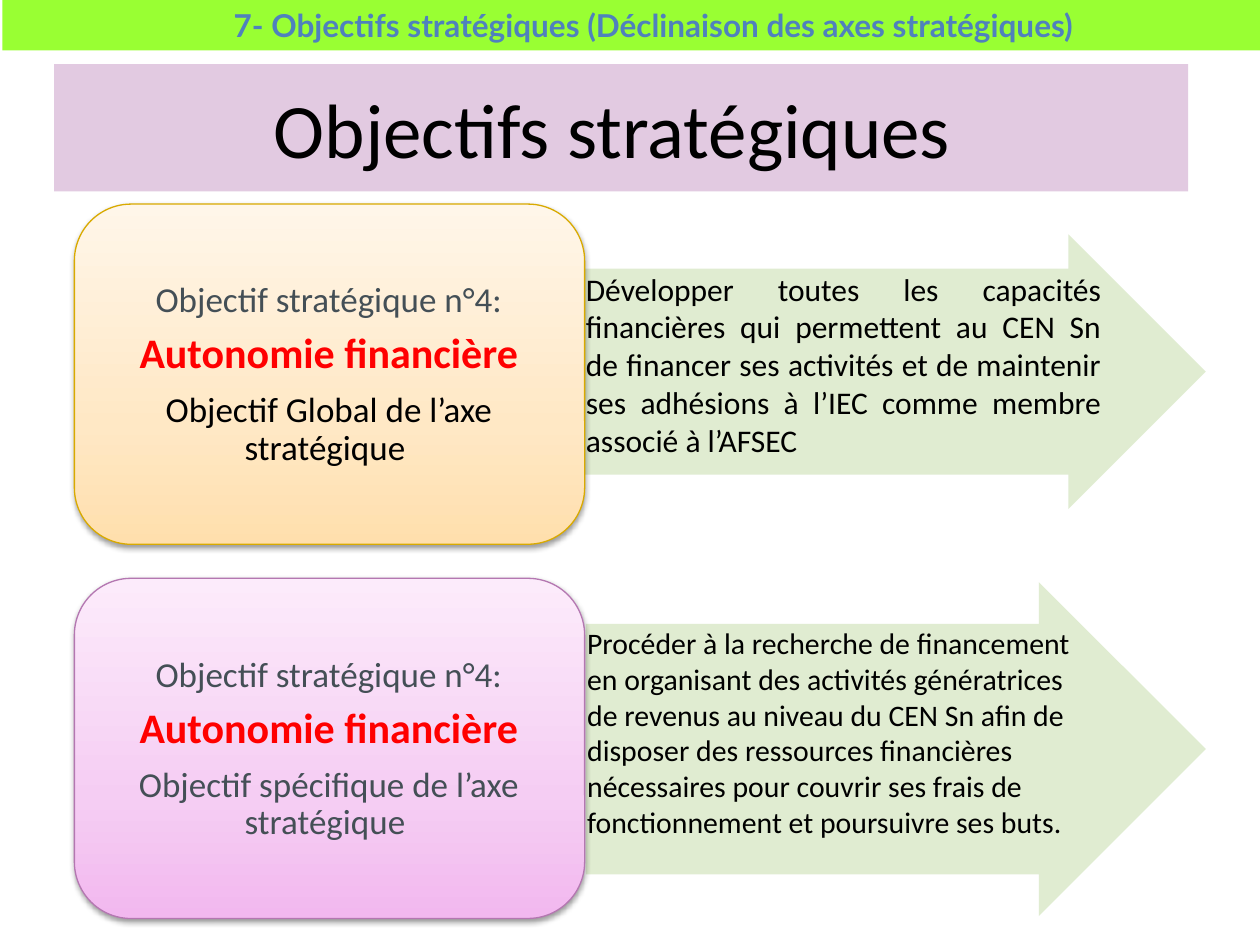
from dataclasses import dataclass

from lxml import etree
from pptx import Presentation
from pptx.dml.color import RGBColor
from pptx.enum.shapes import MSO_SHAPE as Shape
from pptx.enum.text import MSO_ANCHOR as Anchor, PP_ALIGN as Align
from pptx.oxml import parse_xml
from pptx.oxml.ns import nsdecls, qn
from pptx.util import Inches, Pt


@dataclass(frozen=True)
class Theme:
    font: str = "Calibri"
    banner_font: str = "Lato"
    black: str = "000000"
    grey: str = "444F56"
    red: str = "FF0000"
    blue: str = "4F81BD"
    green: str = "99FF33"
    mauve: str = "E2CAE1"
    arrow: str = "DDEBCD"
    orange: tuple = ("FFDFAD", "FFE8C5", "FFF6E9")
    orange_line: str = "D9AA00"
    pink: tuple = ("F2B8EF", "F5CDF3", "FCEBFB")
    pink_line: str = "B477B1"
    title_size: int = 44
    axis_size: int = 24
    label_size: int = 20
    banner_size: int = 18


def write(para, text, size, color, font=Theme.font, bold=False, align=Align.LEFT,
          line_spacing=None, space_after=None):
    span = para.add_run()
    span.text = text
    span.font.size = Pt(size)
    span.font.name = font
    span.font.bold = bold
    span.font.color.rgb = RGBColor.from_string(color)
    para.alignment = align
    if line_spacing is not None:
        para.line_spacing = line_spacing
    if space_after is not None:
        para.space_after = Pt(space_after)


class Page:
    def __init__(self, deck, theme):
        self.theme = theme
        self.slide = deck.slides.add_slide(deck.slide_layouts[5])

    def title(self, text, left, top, width, height):
        box = self.slide.shapes.title
        box.left, box.top = Inches(left), Inches(top)
        box.width, box.height = Inches(width), Inches(height)
        box.fill.solid()
        box.fill.fore_color.rgb = RGBColor.from_string(self.theme.mauve)
        box.text_frame.vertical_anchor = Anchor.MIDDLE
        write(box.text_frame.paragraphs[0], text, self.theme.title_size,
              self.theme.black, align=Align.CENTER)

    def shape(self, kind, left, top, width, height, color):
        box = self.slide.shapes.add_shape(
            kind, Inches(left), Inches(top), Inches(width), Inches(height))
        box.shadow.inherit = False
        box.fill.solid()
        box.fill.fore_color.rgb = RGBColor.from_string(color)
        box.line.fill.background()
        return box

    def banner(self, text, left, top, width, height):
        box = self.shape(Shape.RECTANGLE, left, top, width, height, self.theme.green)
        frame = box.text_frame
        frame.word_wrap = True
        frame.margin_left = Inches(0.49)
        frame.vertical_anchor = Anchor.MIDDLE
        write(frame.paragraphs[0], text, self.theme.banner_size, self.theme.blue,
              font=self.theme.banner_font, bold=True, align=Align.CENTER)

    def arrow(self, left, top, width, height):
        box = self.shape(Shape.RIGHT_ARROW, left, top, width, height, self.theme.arrow)
        box.adjustments[0], box.adjustments[1] = 0.75, 0.5
        color = box.fill._xPr.find(qn("a:solidFill"))[0]
        etree.SubElement(color, qn("a:alpha"), val="90000")

    def card(self, left, top, width, height, colors, line):
        box = self.shape(Shape.ROUNDED_RECTANGLE, left, top, width, height, colors[0])
        box.line.color.rgb = RGBColor.from_string(line)
        box.line.width = Pt(0.75)
        stops = "".join(
            f'<a:gs pos="{place}"><a:srgbClr val="{color}"/></a:gs>'
            for place, color in zip((0, 35000, 100000), colors))
        properties = box._element.spPr
        properties.replace(properties.find(qn("a:solidFill")), parse_xml(
            f'<a:gradFill {nsdecls("a")} rotWithShape="1"><a:gsLst>{stops}</a:gsLst>'
            '<a:lin ang="16200000" scaled="0"/></a:gradFill>'))
        properties.find(qn("a:effectLst")).append(parse_xml(
            f'<a:outerShdw {nsdecls("a")} blurRad="{Pt(3.1)}" dist="{Pt(1.6)}" '
            'dir="5400000" rotWithShape="0"><a:srgbClr val="000000">'
            '<a:alpha val="38000"/></a:srgbClr></a:outerShdw>'))

    def text(self, left, top, width, height, margins, anchor=Anchor.TOP):
        box = self.slide.shapes.add_textbox(
            Inches(left), Inches(top), Inches(width), Inches(height))
        frame = box.text_frame
        frame.word_wrap = True
        frame.vertical_anchor = anchor
        frame.margin_left = frame.margin_right = Inches(margins[0])
        frame.margin_top = frame.margin_bottom = Inches(margins[1])
        return frame

    def description(self, text, left, top, width, height, size, align):
        frame = self.text(left, top, width, height, (0.01, 0.01))
        write(frame.paragraphs[0], text, size, self.theme.black, align=align)

    def objective(self, goal, goal_color, left, top, width, height):
        theme = self.theme
        frame = self.text(left, top, width, height, (0.08, 0.04), Anchor.MIDDLE)
        lines = (
            ("Objectif stratégique n°4:", theme.label_size, theme.grey, False),
            ("Autonomie financière", theme.axis_size, theme.red, True),
            (goal, theme.label_size, goal_color, False),
        )
        for index, (text, size, color, bold) in enumerate(lines):
            para = frame.add_paragraph() if index else frame.paragraphs[0]
            write(para, text, size, color, bold=bold, align=Align.CENTER,
                  line_spacing=0.9, space_after=size * 0.35)


def main():
    theme = Theme()
    deck = Presentation()
    deck.slide_width, deck.slide_height = Inches(10), Inches(7.5)
    page = Page(deck, theme)
    page.title("Objectifs stratégiques ", 0.43, 0.51, 9, 1.01)

    rows = (
        dict(top=1.62, arrow=(4.64, 1.86, 4.93, 2.18), area=(4.64, 2.13, 4.11, 1.64),
             text="Développer toutes les capacités financières qui permettent au CEN Sn "
                  "de financer ses activités et de maintenir ses adhésions à l’IEC comme "
                  "membre associé à l’AFSEC",
             size=18, align=Align.JUSTIFY, colors=theme.orange, line=theme.orange_line,
             goal="Objectif Global de l’axe stratégique ", goal_color=theme.black),
        dict(top=4.59, arrow=(4.65, 4.62, 4.92, 2.65), area=(4.65, 4.95, 3.92, 1.99),
             text="Procéder à la recherche de financement en organisant des activités "
                  "génératrices de revenus au niveau du CEN Sn afin de disposer des "
                  "ressources financières nécessaires pour couvrir ses frais de "
                  "fonctionnement et poursuivre ses buts.",
             size=17, align=Align.LEFT, colors=theme.pink, line=theme.pink_line,
             goal="Objectif spécifique de l’axe stratégique ", goal_color=theme.grey),
    )
    for row in rows:
        page.arrow(*row["arrow"])
        page.description(row["text"], *row["area"], row["size"], row["align"])
        page.card(0.59, row["top"], 4.05, 2.7, row["colors"], row["line"])
        page.objective(row["goal"], row["goal_color"], 0.72, row["top"] + 0.14, 3.78, 2.44)

    page.banner("7- Objectifs stratégiques (Déclinaison des axes stratégiques) ",
                0.02, 0, 10, 0.4)
    deck.save("out.pptx")


if __name__ == "__main__":
    main()
